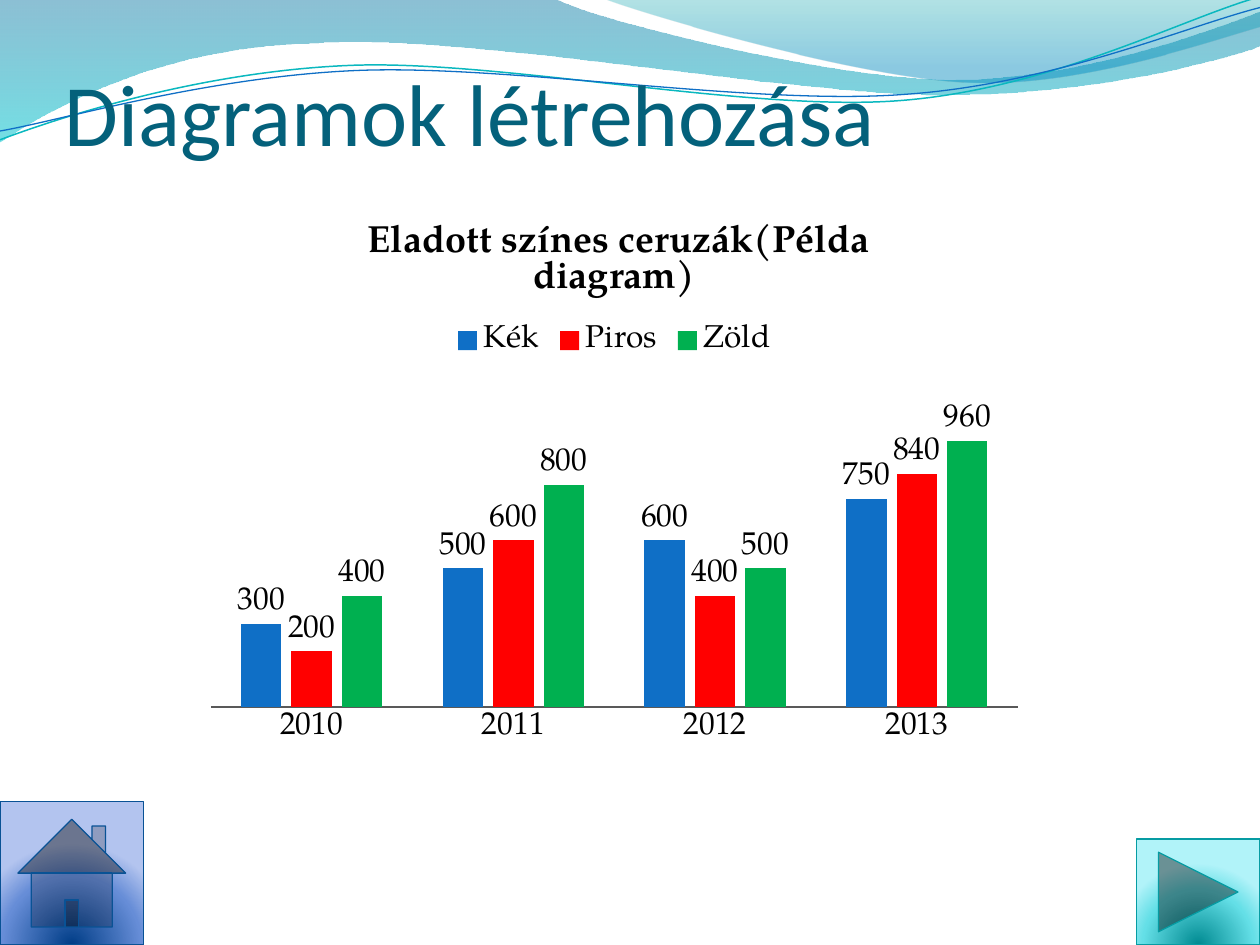
import pptx
import pptx.chart.data
import pptx.dml.color
import pptx.enum.chart
import pptx.enum.shapes
import pptx.enum.text
import pptx.oxml
import pptx.oxml.ns
import pptx.util

Inches = pptx.util.Inches
Pt = pptx.util.Pt
qn = pptx.oxml.ns.qn

COLORS = {"title": "04617B", "text": "000000", "axis": "595959",
          "teal": "0AB8BF", "blue": "0F6FC6", "red": "FF0000", "green": "00B050"}
TITLE = "Diagramok létrehozása"
CHART_TITLE = " Eladott színes ceruzák(Példa diagram)"
CHART_FONT = "TeX Gyre Pagella"
YEARS = ["2010", "2011", "2012", "2013"]
SERIES = [
    ("Kék", (300, 500, 600, 750), "blue"),
    ("Piros", (200, 600, 400, 840), "red"),
    ("Zöld", (400, 800, 500, 960), "green"),
]

WAVES = [
    {"outline": [(0, 0), (4.4, -0.01), (4.76, 0.17, 6.64, 0.63, 7.58, 0.63),
                 (8.53, 0.63, 9.58, 0.26, 10, 0.09), (10.01, 0.36),
                 (9.83, 0.44, 8.7, 0.76, 7.46, 0.75),
                 (6.22, 0.75, 3.82, 0.28, 2.57, 0.34),
                 (1.29, 0.36, 0.46, 0.83, -0.01, 1.13), (0, 0)],
     "stops": [(0, "0074A1", 45), (100, "00C6CF", 55)]},
    {"outline": [(4.79, -0.01), (5.09, 0.11, 6.82, 0.62, 7.69, 0.65),
                 (8.56, 0.69, 9.61, 0.32, 10, 0.21), (10, 0), (4.79, -0.01)],
     "stops": [(0, "00A1A9", 30), (80, "008BBF", 45)]},
    {"outline": [(0, 1.11), (0.48, 0.93, 1.58, 0.57, 2.77, 0.52),
                 (3.95, 0.47, 5.93, 0.89, 7.13, 0.8),
                 (8.33, 0.71, 9.38, 0.15, 9.98, -0.02)],
     "line": ("teal", 0.85)},
    {"outline": [(0, 1.04), (0.47, 0.96, 1.64, 0.61, 2.83, 0.56),
                 (4.03, 0.51, 5.97, 0.84, 7.17, 0.75),
                 (8.36, 0.67, 9.41, 0.21, 10, 0.06)],
     "line": ("blue", 0.75)},
]
BUTTONS = [
    ("ACTION_BUTTON_FORWARD_OR_NEXT", (9.02, 6.66, 0.98, 0.84),
     [(0, "008A91", 100), (68, "64DFE7", 100), (100, "B1F3F9", 100)], "069CA3"),
    ("ACTION_BUTTON_HOME", (0, 6.36, 1.14, 1.14),
     [(0, "003D87", 100), (68, "668DD7", 100), (100, "B3C4EF", 100)], "095295"),
]
LINEAR = '<a:lin ang="5400000" scaled="0"/>'
RADIAL = ('<a:path path="circle"><a:fillToRect l="50000" t="130000" '
          'r="50000" b="-30000"/></a:path>')


def rgb(value):
    return pptx.dml.color.RGBColor.from_string(value)


def drawing_xml(tag, content, attributes=""):
    namespace = pptx.oxml.ns.nsdecls("a")
    return pptx.oxml.parse_xml(f"<a:{tag} {namespace} {attributes}>{content}</a:{tag}>")


def set_gradient(shape, stops, direction):
    stop_xml = "".join(
        f'<a:gs pos="{position * 1000}"><a:srgbClr val="{color}">'
        f'<a:alpha val="{opacity * 1000}"/></a:srgbClr></a:gs>'
        for position, color, opacity in stops)
    shape.fill.background()
    properties = shape._element.spPr
    gradient = drawing_xml("gradFill", f"<a:gsLst>{stop_xml}</a:gsLst>{direction}",
                           'rotWithShape="1"')
    properties.replace(properties.find(qn("a:noFill")), gradient)


def set_line(line, color, width):
    line.color.rgb = rgb(color)
    line.width = Pt(width)


def bend_segments(shape, segments):
    straight_lines = list(shape._element.iter(qn("a:lnTo")))
    for straight_line, segment in zip(straight_lines, segments):
        if len(segment) == 2:
            continue
        points = "".join(
            f'<a:pt x="{Inches(x) - shape.left}" y="{Inches(y) - shape.top}"/>'
            for x, y in zip(segment[::2], segment[1::2]))
        straight_line.getparent().replace(straight_line, drawing_xml("cubicBezTo", points))


def add_wave(slide, wave):
    anchors = [(Inches(segment[-2]), Inches(segment[-1])) for segment in wave["outline"]]
    builder = slide.shapes.build_freeform(*anchors[0])
    builder.add_line_segments(anchors[1:], close="stops" in wave)
    shape = builder.convert_to_shape()
    bend_segments(shape, wave["outline"][1:])
    shape.shadow.inherit = False
    if "stops" in wave:
        set_gradient(shape, wave["stops"], LINEAR)
        shape.line.fill.background()
    else:
        color, width = wave["line"]
        shape.fill.background()
        set_line(shape.line, COLORS[color], width)


def add_title(slide):
    title = slide.shapes.title
    slide.shapes._spTree.append(title._element)
    title.left, title.top, title.width, title.height = map(Inches, (0.51, 0.05, 9, 1.25))
    frame = title.text_frame
    frame.text = TITLE
    frame.word_wrap = True
    frame.vertical_anchor = pptx.enum.text.MSO_ANCHOR.BOTTOM
    frame.margin_left = frame.margin_right = frame.margin_bottom = 0
    frame.margin_top = Inches(0.05)
    paragraph = frame.paragraphs[0]
    paragraph.alignment = pptx.enum.text.PP_ALIGN.LEFT
    paragraph.font.size = Pt(50)
    paragraph.font.name = "Calibri"
    paragraph.font.color.rgb = rgb(COLORS["title"])


def set_chart_font(font, size):
    font.size = Pt(size)
    font.name = CHART_FONT
    font.color.rgb = rgb(COLORS["text"])


def add_chart(slide):
    data = pptx.chart.data.CategoryChartData()
    data.categories = YEARS
    for name, values, _ in SERIES:
        data.add_series(name, values)
    chart = slide.shapes.add_chart(
        pptx.enum.chart.XL_CHART_TYPE.COLUMN_CLUSTERED,
        *map(Inches, (1.54, 1.55, 6.67, 4.44)), data).chart
    set_chart_font(chart.font, 18)

    chart.has_title = True
    chart.chart_title.include_in_layout = False
    chart.chart_title.text_frame.text = CHART_TITLE
    title_font = chart.chart_title.text_frame.paragraphs[0].font
    set_chart_font(title_font, 21.6)
    title_font.bold = True

    chart.has_legend = True
    chart.legend.position = pptx.enum.chart.XL_LEGEND_POSITION.TOP
    chart.legend.include_in_layout = False

    chart.value_axis.visible = False
    chart.value_axis.has_major_gridlines = False
    chart.value_axis.minimum_scale = 0
    chart.value_axis.maximum_scale = 1200
    chart.category_axis.major_tick_mark = pptx.enum.chart.XL_TICK_MARK.NONE
    set_line(chart.category_axis.format.line, COLORS["axis"], 0.75)

    plot = chart.plots[0]
    plot.gap_width = 150
    plot.overlap = -25
    plot.vary_by_categories = False
    for series, (_, _, color) in zip(plot.series, SERIES):
        series.format.fill.solid()
        series.format.fill.fore_color.rgb = rgb(COLORS[color])
        series.data_labels.show_value = True
        series.data_labels.position = pptx.enum.chart.XL_LABEL_POSITION.OUTSIDE_END


def add_button(slide, kind, box, stops, line_color):
    shape = slide.shapes.add_shape(
        getattr(pptx.enum.shapes.MSO_SHAPE, kind), *map(Inches, box))
    set_gradient(shape, stops, RADIAL)
    set_line(shape.line, line_color, 0.75)
    shape.shadow.inherit = False


def main():
    presentation = pptx.Presentation()
    presentation.slide_width = Inches(10)
    presentation.slide_height = Inches(7.5)
    slide = presentation.slides.add_slide(presentation.slide_layouts[5])
    for wave in WAVES:
        add_wave(slide, wave)
    add_title(slide)
    add_chart(slide)
    for button in BUTTONS:
        add_button(slide, *button)
    presentation.save("out.pptx")


if __name__ == "__main__":
    main()
